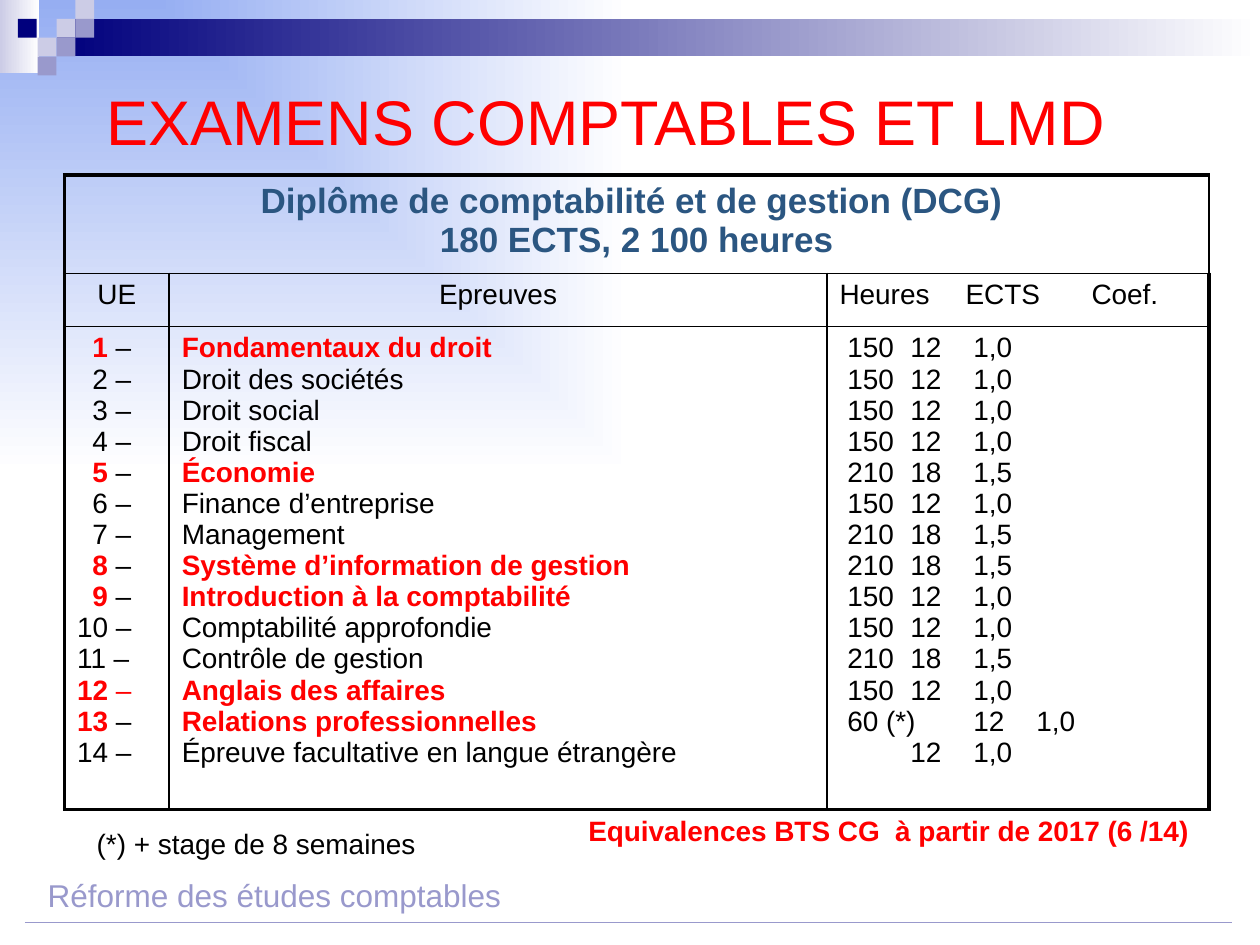
from lxml import etree
from pptx import Presentation
from pptx.dml.color import RGBColor
from pptx.enum import shapes, text
from pptx.oxml import ns
from pptx.util import Cm, Pt

BLACK = RGBColor(0, 0, 0)
WHITE = RGBColor(0xFF, 0xFF, 0xFF)
RED = RGBColor(0xFF, 0, 0)
STEEL = RGBColor(0x2B, 0x56, 0x81)
NAVY = RGBColor(0, 0, 0x7D)
SKY = RGBColor(0x96, 0xAE, 0xF2)
LILAC = RGBColor(0x99, 0x99, 0xCC)
PALE = RGBColor(0xCC, 0xCC, 0xE6)

DIPLOMA = ["Diplôme de comptabilité et de gestion (DCG) ", "180 ECTS, 2 100 heures"]
HEADINGS = ["UE", "Epreuves", "Heures\tECTS\tCoef."]
# name, hours, ECTS, coefficient
EXAMS = [
    ("Fondamentaux du droit", "150", 12, "1,0"),
    ("Droit des sociétés", "150", 12, "1,0"),
    ("Droit social", "150", 12, "1,0"),
    ("Droit fiscal", "150", 12, "1,0"),
    ("Économie", "210", 18, "1,5"),
    ("Finance d’entreprise", "150", 12, "1,0"),
    ("Management", "210", 18, "1,5"),
    ("Système d’information de gestion", "210", 18, "1,5"),
    ("Introduction à la comptabilité", "150", 12, "1,0"),
    ("Comptabilité approfondie", "150", 12, "1,0"),
    ("Contrôle de gestion", "210", 18, "1,5"),
    ("Anglais des affaires", "150", 12, "1,0"),
    ("Relations professionnelles", "60 (*)", 12, "1,0"),
    ("Épreuve facultative en langue étrangère", "", 12, "1,0"),
]
EQUIVALENT = {1, 5, 8, 9, 12, 13}
RED_DASH = {12}

COLUMN_WIDTHS = [2.11, 13.26, 7.7]
ROW_HEIGHTS = [1.98, 1.07, 9.73]
THICK, THIN = 2.25, 1
DIGIT_INDENT = 0.31

SQUARE = 0.38
# column and row on the grid of squares, colour
SQUARES = [(3, 1, PALE), (4, 0, PALE), (4, 1, LILAC), (2, 2, PALE),
           (0.95, 1, NAVY), (3, 2, LILAC), (2, 3, LILAC)]


def set_gradient(fill, start, end):
    fill.gradient()
    for stop, colour, position in zip(fill.gradient_stops, (start, end), (0, 1)):
        stop.color.rgb = colour
        stop.position = position


def add_rect(slide, left, top, width, height):
    rect = slide.shapes.add_shape(shapes.MSO_SHAPE.RECTANGLE,
                                  Cm(left), Cm(top), Cm(width), Cm(height))
    rect.shadow.inherit = False
    rect.line.fill.background()
    return rect


def write(frame, paragraphs, size=16, colour=BLACK, bold=False, align=None):
    """Fill a frame; a paragraph is a string or a list of (text, colour, bold)."""
    for index, content in enumerate(paragraphs):
        para = frame.paragraphs[0] if index == 0 else frame.add_paragraph()
        para.alignment = align
        spans = [(content, colour, bold)] if isinstance(content, str) else content
        for words, span_colour, span_bold in spans:
            span = para.add_run()
            span.text = words
            span.font.name = "Arial"
            span.font.size = Pt(size)
            span.font.bold = span_bold
            span.font.color.rgb = span_colour


def add_text(slide, words, left, top, width, height, wrap=True, anchor=None, **style):
    box = slide.shapes.add_textbox(Cm(left), Cm(top), Cm(width), Cm(height))
    box.text_frame.word_wrap = wrap
    box.text_frame.vertical_anchor = anchor
    write(box.text_frame, [words], **style)


def set_borders(cell, **widths):
    """Draw black borders, given in points for L, R, T and B."""
    properties = cell._tc.get_or_add_tcPr()
    for index, (side, width) in enumerate(widths.items()):
        line = etree.Element(ns.qn("a:ln" + side), w=str(int(Pt(width))))
        fill = etree.SubElement(line, ns.qn("a:solidFill"))
        etree.SubElement(fill, ns.qn("a:srgbClr"), val=str(BLACK))
        properties.insert(index, line)


def set_background(slide):
    """Blue in the top left corner, fading to white in rectangles."""
    fill = slide.background.fill
    set_gradient(fill, SKY, WHITE)
    gradient = slide._element.find(".//" + ns.qn("a:gradFill"))
    for linear in gradient.findall(ns.qn("a:lin")):
        gradient.remove(linear)
    route = etree.SubElement(gradient, ns.qn("a:path"), path="rect")
    etree.SubElement(route, ns.qn("a:fillToRect"), r="100000", b="100000")


def add_decoration(slide):
    for place, start in [((0, 0, 0.79, 1.47), PALE),
                         ((3 * SQUARE, SQUARE, 25.4 - 3 * SQUARE, 2 * SQUARE), NAVY)]:
        band = add_rect(slide, *place)
        set_gradient(band.fill, start, WHITE)
        band.fill.gradient_angle = 0
    for column, row, colour in SQUARES:
        square = add_rect(slide, column * SQUARE, row * SQUARE, SQUARE, SQUARE)
        square.fill.solid()
        square.fill.fore_color.rgb = colour


def add_exam_table(slide):
    frame = slide.shapes.add_table(3, 3, Cm(1.3), Cm(3.53),
                                   Cm(sum(COLUMN_WIDTHS)), Cm(sum(ROW_HEIGHTS)))
    table = frame.table
    table.first_row = table.horz_banding = False
    for column, width in zip(table.columns, COLUMN_WIDTHS):
        column.width = Cm(width)
    for row, height in zip(table.rows, ROW_HEIGHTS):
        row.height = Cm(height)
    for r in range(3):
        for c in range(3):
            cell = table.cell(r, c)
            cell.fill.background()
            set_borders(cell, L=THIN if c else THICK, R=THICK if c == 2 else THIN,
                        T=THIN if r else THICK, B=THICK if r == 2 else THIN)

    center = text.PP_ALIGN.CENTER
    table.cell(0, 0).merge(table.cell(0, 2))
    write(table.cell(0, 0).text_frame, DIPLOMA, size=20, colour=STEEL,
          bold=True, align=center)
    for c, heading in enumerate(HEADINGS):
        write(table.cell(1, c).text_frame, [heading], align=center if c < 2 else None)

    numbers, names, figures = [], [], []
    for number, (name, hours, ects, coefficient) in enumerate(EXAMS, 1):
        marked = number in EQUIVALENT
        colour = RED if marked else BLACK
        dash_colour = RED if number in RED_DASH else BLACK
        numbers.append([(str(number), colour, marked), (" –", dash_colour, False)])
        names.append([(name, colour, marked)])
        figures.append(f"{' ' + hours if hours else ''}\t {ects}\t {coefficient}")
    for c, paragraphs in enumerate([numbers, names, figures]):
        write(table.cell(2, c).text_frame, paragraphs)
    for para in table.cell(2, 0).text_frame.paragraphs[:9]:
        para._p.get_or_add_pPr().set("marL", str(int(Cm(DIGIT_INDENT))))


def add_footer(slide):
    add_text(slide, "Réforme des études comptables", 0.71, 17.53, 23.85, 1.02,
             size=18, colour=LILAC)
    rule = slide.shapes.add_connector(shapes.MSO_CONNECTOR.STRAIGHT,
                                      Cm(0.5), Cm(18.59), Cm(24.84), Cm(18.59))
    rule.line.color.rgb = LILAC
    rule.line.width = Pt(0.75)
    etree.SubElement(rule._element.spPr, ns.qn("a:effectLst"))


def main():
    deck = Presentation()
    deck.slide_width, deck.slide_height = Cm(25.4), Cm(19.05)
    slide = deck.slides.add_slide(deck.slide_layouts[6])
    set_background(slide)
    add_decoration(slide)
    add_text(slide, "EXAMENS COMPTABLES ET LMD", 1.9, 1.52, 21.11, 1.8,
             anchor=text.MSO_ANCHOR.MIDDLE, size=36, colour=RED)
    add_text(slide, "(*) + stage de 8 semaines", 1.7, 16.54, 6.96, 0.94, wrap=False)
    add_exam_table(slide)
    add_footer(slide)
    add_text(slide, "Equivalences BTS CG  à partir de 2017 (6 /14)",
             11.61, 16.28, 13.11, 0.94, colour=RED, bold=True)
    deck.save("out.pptx")


if __name__ == "__main__":
    main()
